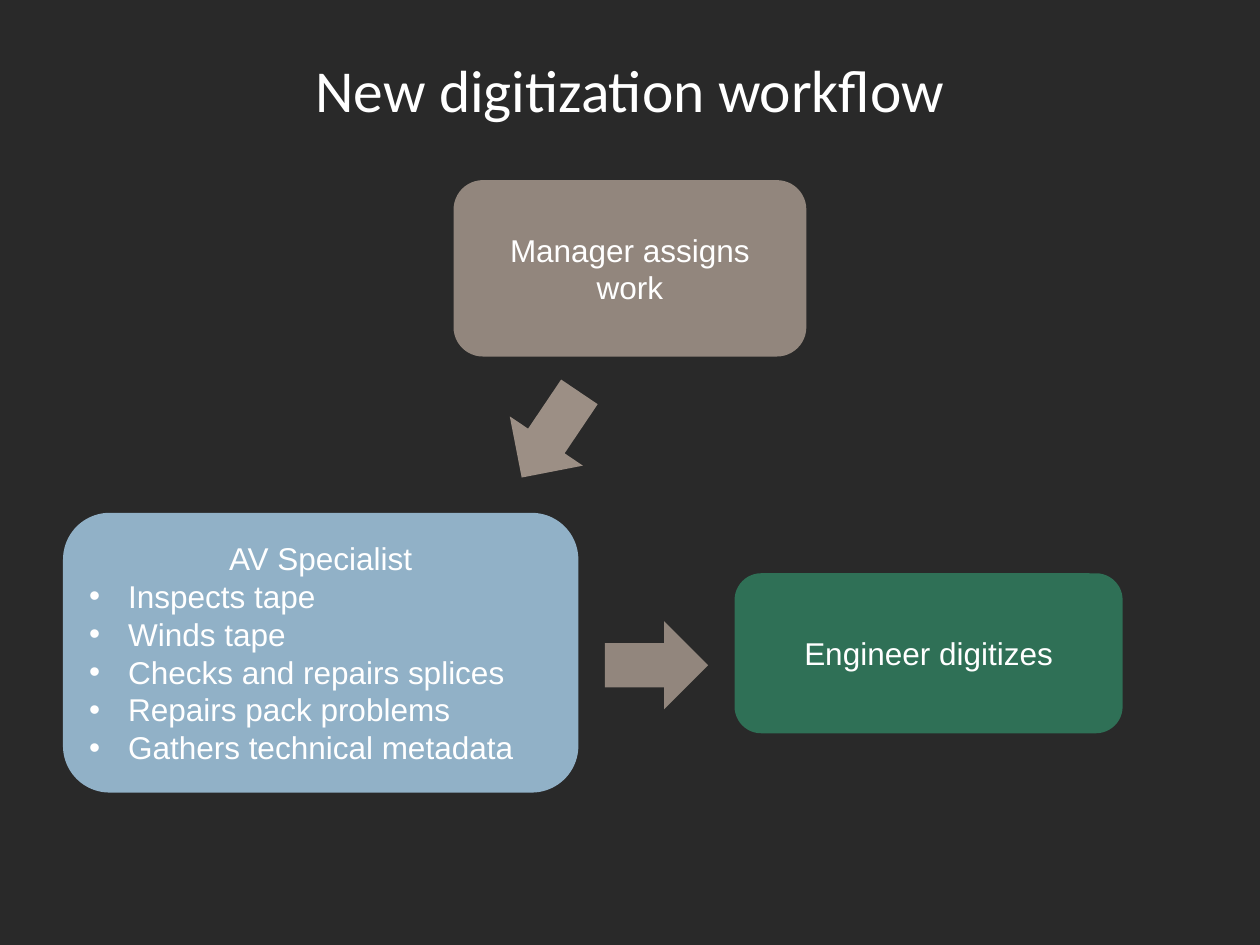
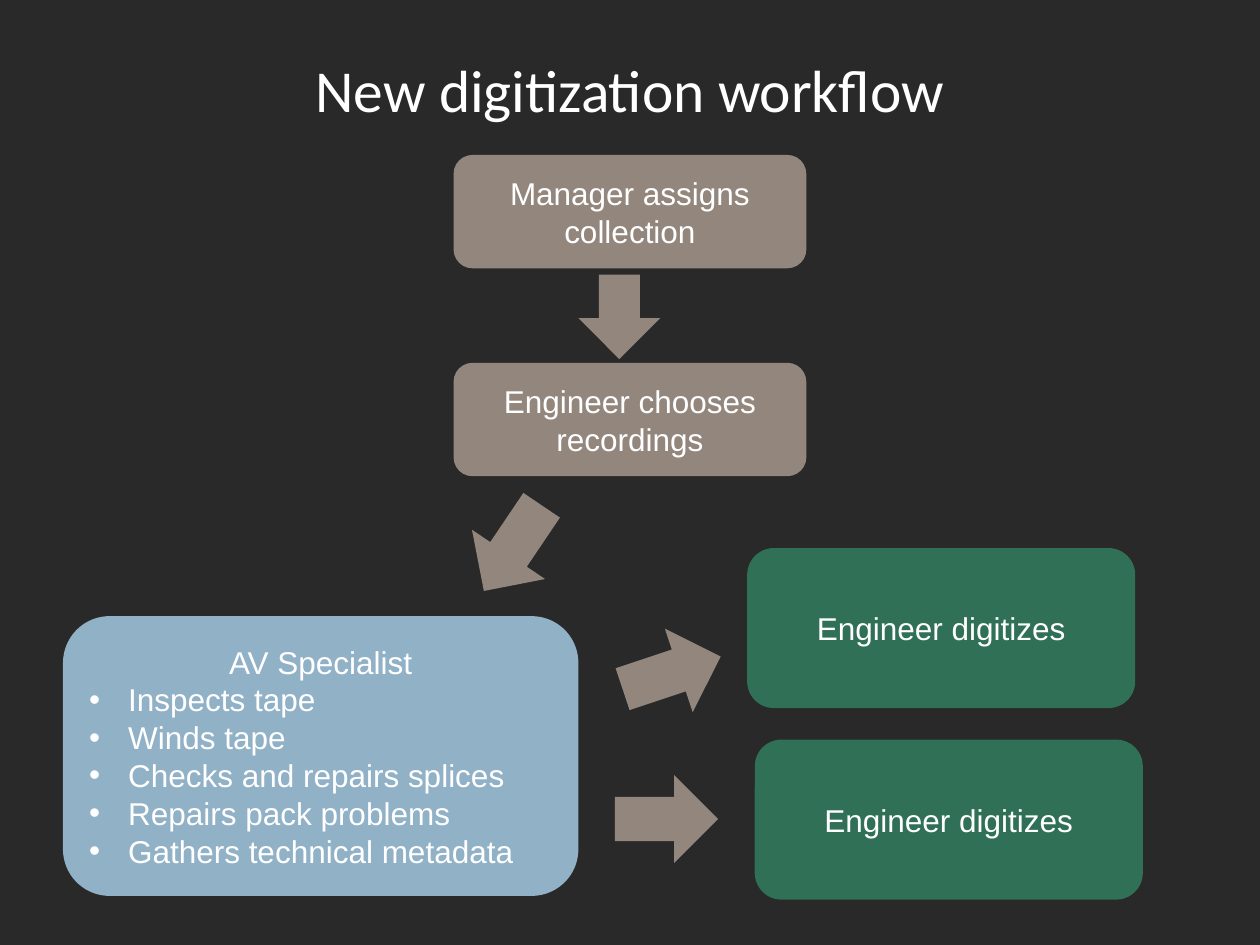
from lxml import etree
from pptx import Presentation
from pptx.dml.color import RGBColor
from pptx.enum.shapes import MSO_SHAPE
from pptx.enum.text import MSO_ANCHOR, PP_ALIGN
from pptx.oxml.ns import qn
from pptx.util import Inches, Pt

ROUND_RECT = MSO_SHAPE.ROUNDED_RECTANGLE
DOWN_ARROW = MSO_SHAPE.DOWN_ARROW
CENTER, LEFT = PP_ALIGN.CENTER, PP_ALIGN.LEFT
MIDDLE = MSO_ANCHOR.MIDDLE

BACKGROUND = "292929"
WHITE = "FFFFFF"
TAUPE = "9E9187"
BLUE = "9DC0D9"
GREEN = "30785B"
TITLE_FONT, BODY_FONT = "Calibri", "Arial"

TITLE_BOX = (0.5, 0.11, 9, 1.19)
SPECIALIST_SIZE = (4.09, 2.22)
ENGINEER_SIZE = (3.08, 1.27)
MANAGER_LEFT, MANAGER_WIDTH = 3.6, 2.8
ARROW_SIZE = (0.7, 0.82)
BULLET_INDENT = Inches(0.31)
SPECIALIST_TASKS = [
    "Inspects tape",
    "Winds tape",
    "Checks and repairs splices",
    "Repairs pack problems",
    "Gathers technical metadata",
]


def set_fill(fill, color, opacity=100):
    """Apply a solid hex colour with an opacity in percent."""
    fill.solid()
    fill.fore_color.rgb = RGBColor.from_string(color)
    if opacity < 100:
        clr = fill._xPr.find(qn("a:solidFill"))[0]
        etree.SubElement(clr, qn("a:alpha"), val=str(opacity * 1000))


def format_run(r, font, size):
    r.font.name = font
    r.font.size = Pt(size)
    set_fill(r.font.fill, WHITE)


def add_text_shadow(r):
    effects = etree.Element(qn("a:effectLst"))
    shadow = etree.SubElement(effects, qn("a:outerShdw"), blurRad="38100",
                              dist="38100", dir="2700000", algn="tl")
    clr = etree.SubElement(shadow, qn("a:srgbClr"), val="000000")
    etree.SubElement(clr, qn("a:alpha"), val="43000")
    r.font._element.find(qn("a:solidFill")).addnext(effects)


def add_bullet(p):
    pPr = p._p.get_or_add_pPr()
    pPr.set("marL", str(BULLET_INDENT))
    pPr.set("indent", str(-BULLET_INDENT))
    etree.SubElement(pPr, qn("a:buFont"), typeface=BODY_FONT)
    etree.SubElement(pPr, qn("a:buChar"), char="•")


def add_block(s, kind, box, color, opacity=90):
    sp = s.shapes.add_shape(kind, *map(Inches, box))
    sp.shadow.inherit = False
    set_fill(sp.fill, color, opacity)
    sp.line.fill.background()
    return sp


def add_step(s, box, color, heading, tasks=()):
    """Add a rounded box with a centred heading and optional bullets."""
    tf = add_block(s, ROUND_RECT, box, color).text_frame
    tf.word_wrap = True
    tf.vertical_anchor = MIDDLE
    tf.text = "\n".join([heading, *tasks])
    for i, p in enumerate(tf.paragraphs):
        p.alignment = LEFT if i else CENTER
        if i:
            add_bullet(p)
        format_run(p.runs[0], BODY_FONT, 18)


def add_manager_step(s, top, height, text):
    add_step(s, (MANAGER_LEFT, top, MANAGER_WIDTH, height), TAUPE, text)


def add_specialist(s, top):
    add_step(s, (0.5, top, *SPECIALIST_SIZE), BLUE, "AV Specialist",
             SPECIALIST_TASKS)


def add_engineer(s, left, top):
    add_step(s, (left, top, *ENGINEER_SIZE), GREEN, "Engineer digitizes")


def add_arrow(s, left, top, rotation=0, size=ARROW_SIZE, opacity=90):
    sp = add_block(s, DOWN_ARROW, (left, top, *size), TAUPE, opacity)
    sp.rotation = rotation


def add_workflow_slide(prs):
    s = prs.slides.add_slide(prs.slide_layouts[5])
    title = s.shapes.title
    title.left, title.top, title.width, title.height = map(Inches, TITLE_BOX)
    tf = title.text_frame
    tf.text = "New digitization workflow"
    tf.vertical_anchor = MIDDLE
    p = tf.paragraphs[0]
    p.alignment = CENTER
    format_run(p.runs[0], TITLE_FONT, 34)
    add_text_shadow(p.runs[0])
    return s


def build_single_engineer(prs):
    s = add_workflow_slide(prs)
    add_manager_step(s, 1.43, 1.4, "Manager assigns work")
    add_specialist(s, 4.07)
    add_engineer(s, 5.83, 4.55)
    add_arrow(s, 4.02, 3.04, 34, opacity=99)
    add_arrow(s, 4.86, 4.87, 270)


def build_two_engineers(prs):
    s = add_workflow_slide(prs)
    add_manager_step(s, 1.23, 0.9, "Manager assigns collection")
    add_manager_step(s, 2.88, 0.9, "Engineer chooses recordings")
    add_specialist(s, 4.89)
    add_engineer(s, 5.93, 4.35)
    add_engineer(s, 5.99, 5.87)
    add_arrow(s, 4.59, 2.18, size=(0.65, 0.67))
    add_arrow(s, 3.72, 3.94, 34)
    add_arrow(s, 4.98, 4.93, 251.6)
    add_arrow(s, 4.94, 6.09, 270)


def main():
    prs = Presentation()
    prs.slide_width, prs.slide_height = Inches(10), Inches(7.5)
    set_fill(prs.slide_master.background.fill, BACKGROUND)
    build_single_engineer(prs)
    build_two_engineers(prs)
    prs.save("out.pptx")


if __name__ == "__main__":
    main()
